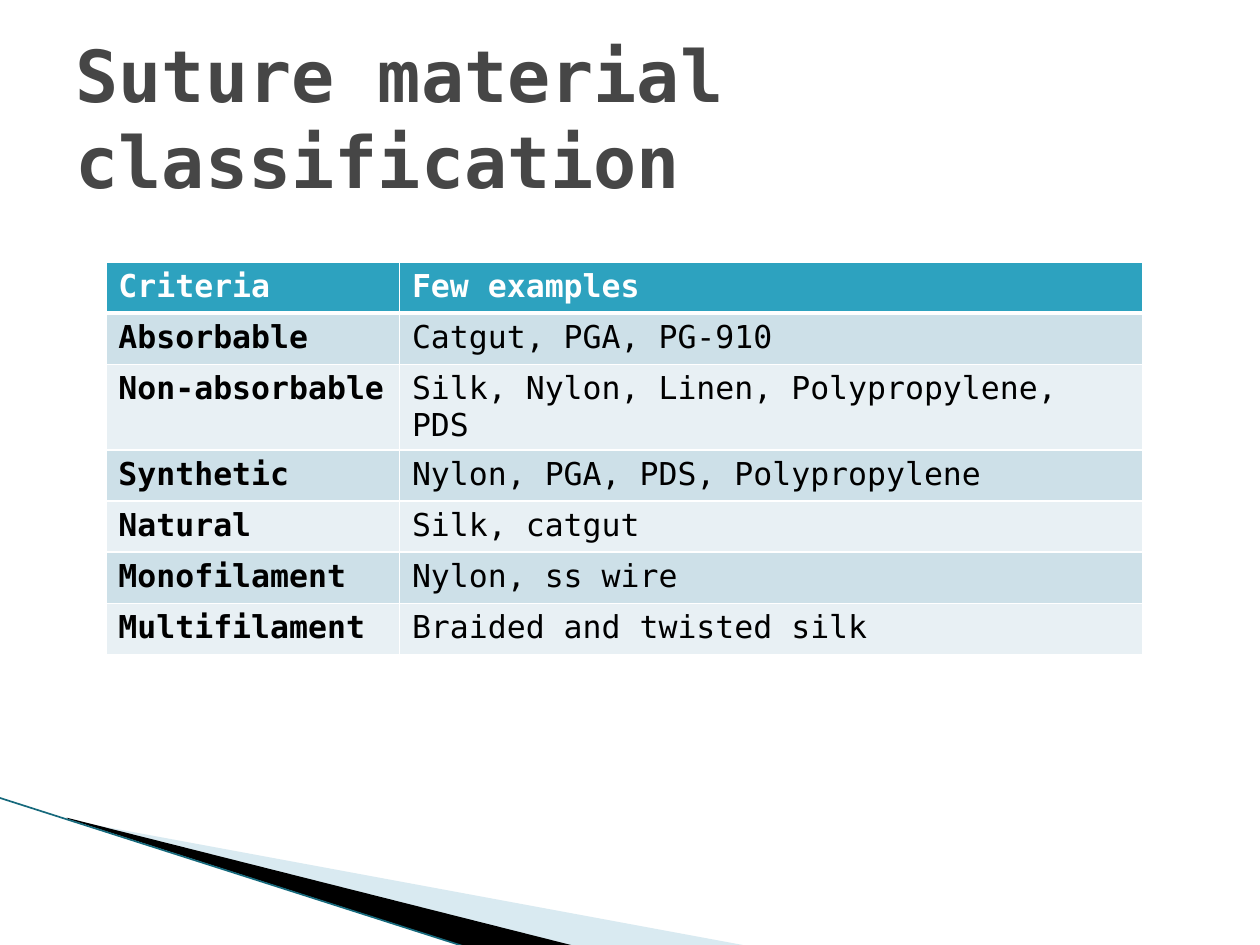
from lxml import etree
from pptx import Presentation
from pptx.dml.color import RGBColor
from pptx.enum.shapes import MSO_CONNECTOR
from pptx.enum.text import MSO_ANCHOR, MSO_AUTO_SIZE, PP_ALIGN
from pptx.oxml.ns import qn
from pptx.util import Pt

PX = 9144  # 100 px to the inch
FONT = "DejaVu Sans Mono"
COLORS = {
    "title": "464646", "text": "000000", "white": "FFFFFF",
    "header": "2DA2BF", "odd": "CDE0E8", "even": "E8F0F4",
    "wedge": "A0CBDC", "band": "000000", "edge": "16697C",
}
ROWS = [
    ("Criteria", "Few examples"),
    ("Absorbable", "Catgut, PGA, PG-910"),
    ("Non-absorbable", "Silk, Nylon, Linen, Polypropylene, PDS"),
    ("Synthetic", "Nylon, PGA, PDS, Polypropylene"),
    ("Natural", "Silk, catgut"),
    ("Monofilament", "Nylon, ss wire"),
    ("Multifilament", "Braided and twisted silk"),
]


def rgb(name):
    return RGBColor.from_string(COLORS[name])


def emu(*lengths):
    return [length * PX for length in lengths]


def style_font(font, color, **values):
    for name, value in {"name": FONT, **values}.items():
        setattr(font, name, value)
    font.color.rgb = rgb(color)


def add_title(page, box, text):
    title = page.shapes.title
    for name, value in zip(("left", "top", "width", "height"), emu(*box)):
        setattr(title, name, value)
    frame = title.text_frame
    frame.text = text
    layout = {"word_wrap": True, "auto_size": MSO_AUTO_SIZE.NONE,
              "vertical_anchor": MSO_ANCHOR.MIDDLE}
    for name, value in layout.items():
        setattr(frame, name, value)
    para = frame.paragraphs[0]
    para.alignment = PP_ALIGN.LEFT
    style_font(para.runs[0].font, "title", size=Pt(41), bold=True)


def set_borders(cell, top_and_bottom):
    """Draw white cell borders, with widths in points for top and bottom."""
    props = cell._tc.get_or_add_tcPr()
    widths = {"lnL": 1, "lnR": 1, **top_and_bottom}
    for index, (side, width) in enumerate(widths.items()):
        line = etree.Element(qn(f"a:{side}"), w=str(Pt(width)))
        fill = etree.SubElement(line, qn("a:solidFill"))
        etree.SubElement(fill, qn("a:srgbClr"), val=COLORS["white"])
        props.insert(index, line)


def add_criteria_table(page, box, column_widths):
    frame = page.shapes.add_table(len(ROWS), len(column_widths), *emu(*box))
    table = frame.table
    table.horz_banding = False
    for column, width in zip(table.columns, column_widths):
        column.width = width * PX
    for r, texts in enumerate(ROWS):
        table.rows[r].height = box[3] * PX // len(ROWS)
        fill = "header" if r == 0 else "odd" if r % 2 else "even"
        for c, text in enumerate(texts):
            cell = table.cell(r, c)
            cell.text = text
            cell.fill.solid()
            cell.fill.fore_color.rgb = rgb(fill)
            style_font(cell.text_frame.paragraphs[0].runs[0].font,
                       "white" if r == 0 else "text",
                       size=Pt(18), bold=r == 0 or c == 0)
            set_borders(cell, {"lnT": 3 if r == 1 else 1,
                               "lnB": 3 if r == 0 else 1})


def add_polygon(page, origin, points, color, opacity=100):
    left, top = origin
    corners = [(left + x, top + y) for x, y in points]
    builder = page.shapes.build_freeform(*corners[0], scale=PX)
    builder.add_line_segments(corners[1:], close=True)
    shape = builder.convert_to_shape()
    shape.shadow.inherit = False
    shape.fill.solid()
    shape.fill.fore_color.rgb = rgb(color)
    shape.line.fill.background()
    if opacity < 100:
        tint = shape.fill._xPr.find(qn("a:solidFill"))[0]
        etree.SubElement(tint, qn("a:alpha"), val=str(opacity * 1000))


def add_corner_wedges(page, box):
    left, top, width, height = box
    add_polygon(page, (left, top),
                [(56, 18), (596, 118), (457, 118), (56, 17)], "wedge", 40)
    add_polygon(page, (left, top),
                [(54, 16), (458, 118), (373, 119), (55, 17)], "band")
    edge = page.shapes.add_connector(
        MSO_CONNECTOR.STRAIGHT,
        *emu(left, top, left + width, top + height))
    edge.line.color.rgb = rgb("edge")
    edge.line.width = Pt(0.95)
    etree.SubElement(edge._element.spPr, qn("a:effectLst"))


def main():
    deck = Presentation()
    deck.slide_width, deck.slide_height = emu(1000, 750)
    page = deck.slides.add_slide(deck.slide_layouts[5])
    add_corner_wedges(page, (-1, 633, 372, 119))
    add_title(page, (50, 30, 900, 125), "Suture material classification")
    add_criteria_table(page, (84, 208, 823, 284), (233, 590))
    deck.save("out.pptx")


if __name__ == "__main__":
    main()
